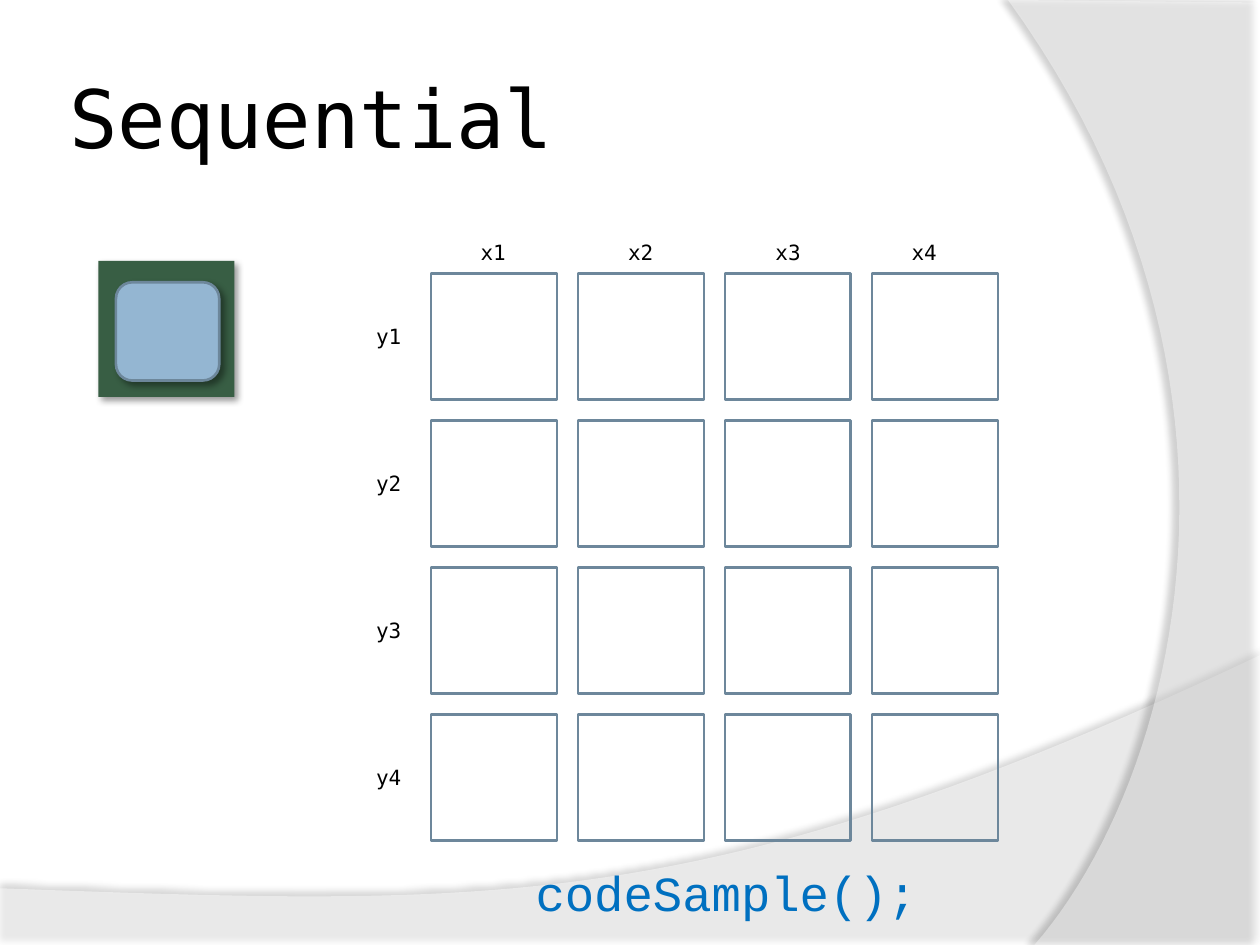
"""Build the Sequential slide: one processor block beside a four by four grid."""
from lxml.etree import SubElement
from pptx import Presentation
from pptx.dml.color import RGBColor
from pptx.enum.shapes import MSO_SHAPE
from pptx.enum.text import MSO_ANCHOR, PP_ALIGN
from pptx.oxml.ns import qn
from pptx.util import Inches, Pt

MONO = "DejaVu Sans Mono"
OUTLINE = "6D879B"


def paint(shape, fill=None, line=None, opacity=100, shadow=None):
    shape.shadow.inherit = False
    if fill:
        shape.fill.solid()
        shape.fill.fore_color.rgb = RGBColor.from_string(fill)
    else:
        shape.fill.background()
    if line:
        shape.line.color.rgb = RGBColor.from_string(line)
        shape.line.width = Pt(1.5)
    else:
        shape.line.fill.background()
    properties = shape._element.spPr
    if opacity < 100:
        tint = properties.find(qn("a:solidFill")).find(qn("a:srgbClr"))
        SubElement(tint, qn("a:alpha"), val=str(opacity * 1000))
    if shadow:
        strength, blur, distance, angle = shadow
        outer = SubElement(
            properties.find(qn("a:effectLst")), qn("a:outerShdw"),
            blurRad=str(Pt(blur)), dist=str(Pt(distance)),
            dir=str(angle * 60000), algn="ctr", rotWithShape="0")
        black = SubElement(outer, qn("a:srgbClr"), val="000000")
        SubElement(black, qn("a:alpha"), val=str(strength * 1000))


def add_text(text, left, top, width, height, size=12, font=MONO, color="000000",
             align=PP_ALIGN.CENTER, anchor=MSO_ANCHOR.TOP, side_inset=0.1):
    box = slide.shapes.add_textbox(
        Inches(left), Inches(top), Inches(width), Inches(height))
    frame = box.text_frame
    frame.word_wrap = True
    frame.vertical_anchor = anchor
    frame.margin_left = frame.margin_right = Inches(side_inset)
    paragraph = frame.paragraphs[0]
    paragraph.alignment = align
    run = paragraph.add_run()
    run.text = text
    run.font.name = font
    run.font.size = Pt(size)
    run.font.color.rgb = RGBColor.from_string(color)


prs = Presentation()
prs.slide_width, prs.slide_height = Inches(10), Inches(7.5)
slide = prs.slides.add_slide(prs.slide_layouts[6])

waves = [
    ([(0, 7.05), (0, 7.51), (10, 7.51), (10, 5.2)],
     [(5.59, 7.29), (3.91, 7.19), (0, 7.05)], 45, (35, 4, 3.5, 270)),
    ([(10, 0.02), (10, 7.5), (8.21, 7.5)],
     [(9.35, 6.19), (10.18, 3), (8, 0)], 40, (45, 4, 4, 180)),
]
steps = 48
for corners, curve, opacity, shadow in waves:
    controls = [corners[-1], *curve]
    points = list(corners)
    for step in range(1, steps + 1):
        t = step / steps
        weights = ((1 - t) ** 3, 3 * t * (1 - t) ** 2, 3 * t ** 2 * (1 - t), t ** 3)
        points.append(tuple(
            sum(weight * control[axis] for weight, control in zip(weights, controls))
            for axis in (0, 1)))
    outline = [(Inches(x), Inches(y)) for x, y in points]
    builder = slide.shapes.build_freeform(*outline[0])
    builder.add_line_segments(outline[1:], close=True)
    paint(builder.convert_to_shape(), fill="FFFFFF", opacity=opacity, shadow=shadow)

add_text("Sequential", 0.5, 0.3, 8.17, 1.25, size=46, align=PP_ALIGN.LEFT,
         anchor=MSO_ANCHOR.MIDDLE, side_inset=0.05)

grid_left, grid_top, pitch = 3.42, 2.17, 3.5 / 3
for row in range(4):
    for column in range(4):
        cell = slide.shapes.add_shape(
            MSO_SHAPE.RECTANGLE, Inches(grid_left + column * pitch),
            Inches(grid_top + row * pitch), Inches(1), Inches(1))
        paint(cell, line=OUTLINE)

processor = slide.shapes.add_shape(
    MSO_SHAPE.RECTANGLE, Inches(0.78), Inches(2.07), Inches(1.08), Inches(1.08))
paint(processor, fill="385E44", shadow=(40, 4, 3, 45))
core = slide.shapes.add_shape(
    MSO_SHAPE.ROUNDED_RECTANGLE, Inches(0.92), Inches(2.24), Inches(0.82), Inches(0.78))
paint(core, fill="94B6D2", line=OUTLINE, shadow=(40, 4, 3, 45))

for index, column_left in enumerate((3.58, 4.75, 5.92, 7)):
    add_text(f"x{index + 1}", column_left, 1.85, 0.67, 0.3)
for index in range(4):
    add_text(f"y{index + 1}", 2.75, 2.52 + index * pitch, 0.67, 0.3)

add_text("codeSample();", 2.89, 6.8, 5.75, 0.57, size=28, font="Courier New",
         color="0070C0")

prs.save("out.pptx")
